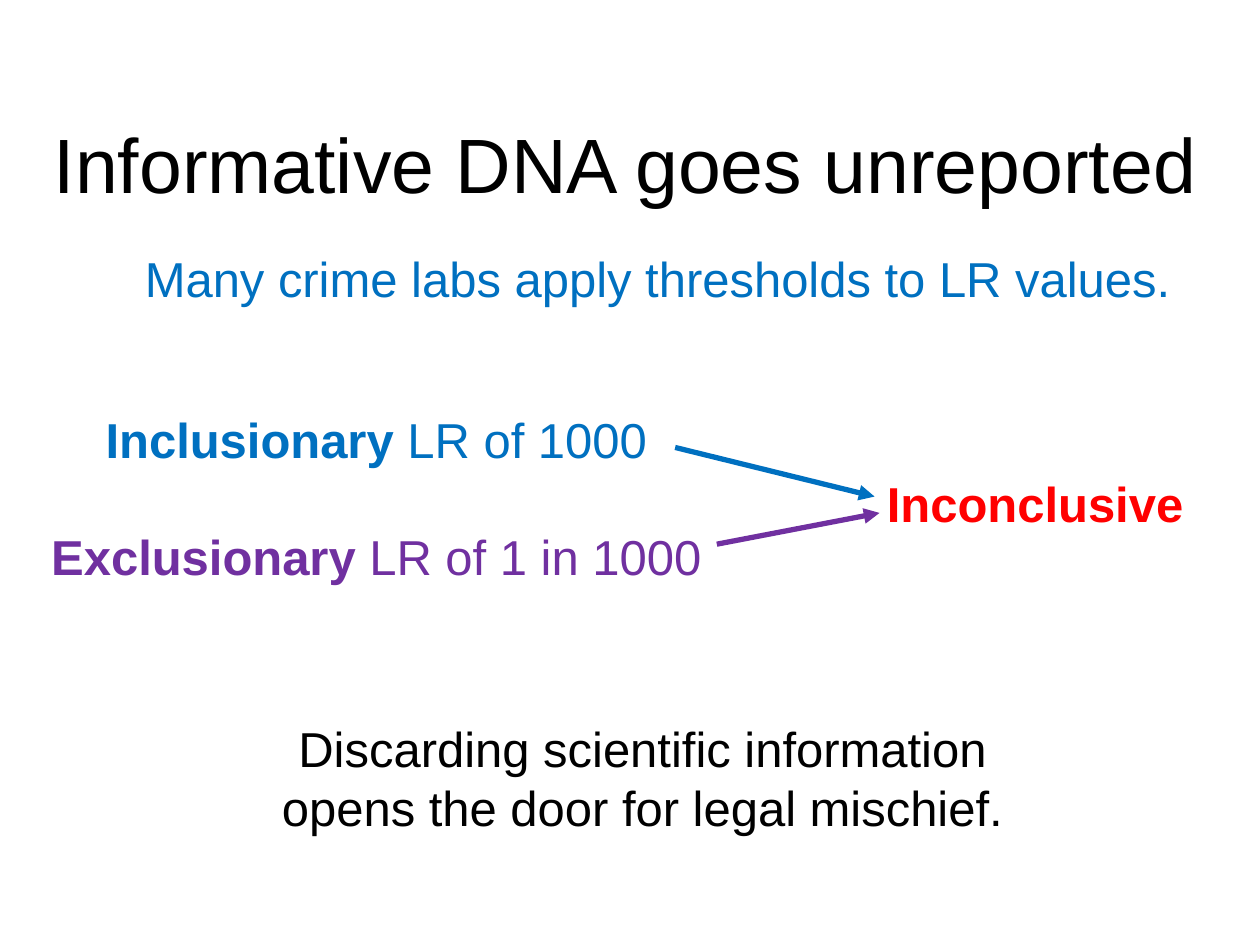
"""Build a slide on thresholds that hide informative DNA results."""
from lxml import etree
from pptx import Presentation
from pptx import util as u
from pptx.dml.color import RGBColor
from pptx.enum import shapes, text
from pptx.oxml.ns import qn

BLACK = RGBColor(0x00, 0x00, 0x00)
BLUE = RGBColor(0x00, 0x70, 0xC0)
PURPLE = RGBColor(0x70, 0x30, 0xA0)
RED = RGBColor(0xFF, 0x00, 0x00)
LEFT, CENTER = text.PP_ALIGN.LEFT, text.PP_ALIGN.CENTER


def add_text(page, place, lines, align=CENTER, size=28, gap=0):
    """Add a text box of lines, each a colour with (wording, bold) spans."""
    box = page.shapes.add_textbox(*map(u.Cm, place))
    frame = box.text_frame
    frame.word_wrap = True
    frame.vertical_anchor = text.MSO_ANCHOR.MIDDLE
    for index, (color, spans) in enumerate(lines):
        para = frame.add_paragraph() if index else frame.paragraphs[0]
        para.alignment = align
        para.space_before = u.Pt(gap if index else 0)
        para.font.name = "Arial"
        para.font.size = u.Pt(size)
        para.font.color.rgb = color
        for wording, bold in spans:
            span = para.add_run()
            span.text = wording
            span.font.bold = bold


def add_arrow(page, start, end, color):
    """Draw a straight arrow from start to end."""
    arrow = page.shapes.add_connector(
        shapes.MSO_CONNECTOR.STRAIGHT, *map(u.Cm, start + end))
    arrow.line.color.rgb = color
    arrow.line.width = u.Pt(3)
    etree.SubElement(arrow.line._get_or_add_ln(), qn("a:tailEnd"), type="triangle")
    etree.SubElement(arrow._element.spPr, qn("a:effectLst"))


def main():
    """Build and save the slide."""
    deck = Presentation()
    deck.slide_width, deck.slide_height = u.Cm(25.4), u.Cm(19.05)
    page = deck.slides.add_slide(deck.slide_layouts[6])

    add_text(page, (0.64, 1.7, 23.95, 3.18),
             [(BLACK, [("Informative DNA goes unreported", False)])], size=44)
    add_text(page, (2.67, 4.88, 21.72, 1.45),
             [(BLUE, [("Many crime labs apply thresholds to LR values.", False)])],
             align=LEFT)
    add_text(page, (0.69, 8.1, 13.79, 3.86),
             [(BLUE, [("Inclusionary", True), (" LR of 1000", False)]),
              (PURPLE, [("Exclusionary", True), (" LR of 1 in 1000", False)])],
             gap=33.5)
    add_text(page, (17.63, 9.42, 6.58, 1.45),
             [(RED, [("Inconclusive", True)])], align=LEFT)
    add_arrow(page, (13.61, 9.02), (17.63, 10.01), BLUE)
    add_arrow(page, (14.45, 10.97), (17.73, 10.34), PURPLE)
    add_text(page, (5.33, 14.35, 15.24, 2.64),
             [(BLACK, [("Discarding scientific information", False)]),
              (BLACK, [("opens the door for legal mischief.", False)])])

    deck.save("out.pptx")


if __name__ == "__main__":
    main()
